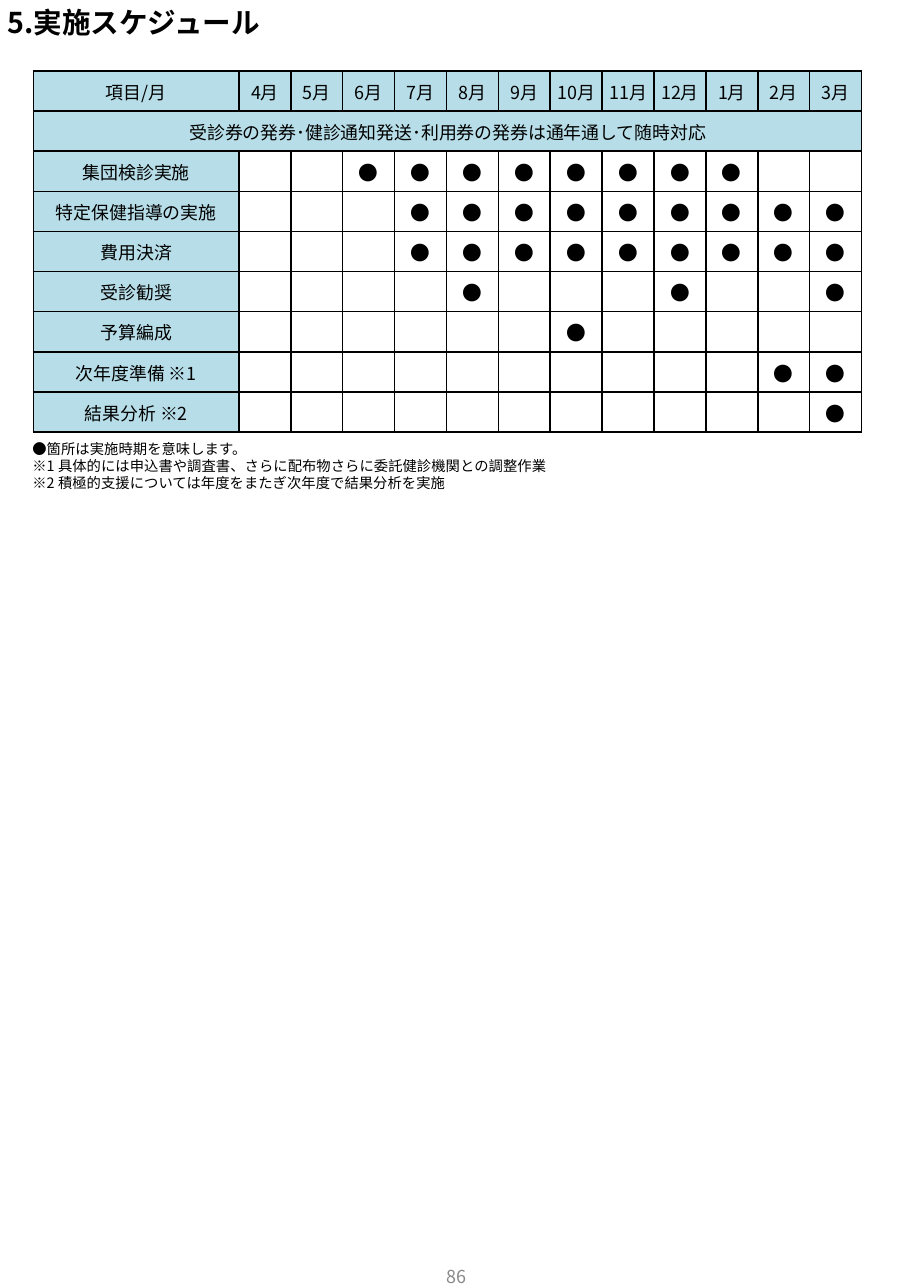
from lxml.etree import SubElement
from pptx import Presentation
from pptx.dml.color import RGBColor
from pptx.enum.text import MSO_ANCHOR as Anchor, MSO_AUTO_SIZE as AutoSize, PP_ALIGN as Align
from pptx.oxml.ns import qn
from pptx.util import Cm, Pt

TITLE = "5.実施スケジュール"
PAGE_NUMBER = "86"
CORNER = "項目/月"
MONTHS = [4, 5, 6, 7, 8, 9, 10, 11, 12, 1, 2, 3]
YEAR_ROUND = "受診券の発券･健診通知発送･利用券の発券は通年通して随時対応"
SCHEDULE = [
    ("集団検診実施", [6, 7, 8, 9, 10, 11, 12, 1]),
    ("特定保健指導の実施", [7, 8, 9, 10, 11, 12, 1, 2, 3]),
    ("費用決済", [7, 8, 9, 10, 11, 12, 1, 2, 3]),
    ("受診勧奨", [8, 12, 3]),
    ("予算編成", [10]),
    ("次年度準備 ※1", [2, 3]),
    ("結果分析 ※2", [3]),
]
NOTES = [
    "●箇所は実施時期を意味します。",
    "※1 具体的には申込書や調査書、さらに配布物さらに委託健診機関との調整作業",
    "※2 積極的支援については年度をまたぎ次年度で結果分析を実施",
]

FONT = "Noto Sans CJK JP"
COLORS = {"text": "000000", "line": "000000", "header": "B7DEE8",
          "body": "FFFFFF", "page": "898989"}
TABLE_LEFT, TABLE_TOP, TABLE_WIDTH, TABLE_HEIGHT = 0.66, 1.4, 16.33, 7.12
LABEL_WIDTH = 4.05


def add_run(paragraph, text, size, color="text", bold=False):
    run = paragraph.add_run()
    run.text = text
    font = run.font
    font.size, font.bold, font.name = Pt(size), bold, FONT
    font.color.rgb = RGBColor.from_string(COLORS[color])
    SubElement(run._r.get_or_add_rPr(), qn("a:ea"), typeface=FONT)


def add_text(slide, box, lines, size, align, anchor, margins, auto_size=AutoSize.NONE, **style):
    shape = slide.shapes.add_textbox(*map(Cm, box))
    frame = shape.text_frame
    frame.word_wrap = True
    frame.auto_size = auto_size
    frame.vertical_anchor = anchor
    frame.margin_left, frame.margin_right = map(Cm, margins)
    for index, line in enumerate(lines):
        paragraph = frame.add_paragraph() if index else frame.paragraphs[0]
        paragraph.alignment = align
        add_run(paragraph, line, size, **style)


def set_borders(cell):
    properties = cell._tc.get_or_add_tcPr()
    for side in ("lnL", "lnR", "lnT", "lnB"):
        line = SubElement(properties, qn(f"a:{side}"), w=str(Pt(1)))
        fill = SubElement(line, qn("a:solidFill"))
        SubElement(fill, qn("a:srgbClr"), val=COLORS["line"])


def fill_cell(cell, text, size, color):
    cell.margin_left = cell.margin_right = cell.margin_top = Cm(0.02)
    cell.margin_bottom = 0
    cell.vertical_anchor = Anchor.MIDDLE
    set_borders(cell)
    cell.fill.solid()
    cell.fill.fore_color.rgb = RGBColor.from_string(COLORS[color])
    paragraph = cell.text_frame.paragraphs[0]
    paragraph.alignment = Align.CENTER
    if text:
        add_run(paragraph, text, size)
    else:  # keeps the empty line from stretching the row
        SubElement(paragraph._p, qn("a:endParaRPr"), sz=str(size * 100))


def add_schedule(slide):
    rows = [[CORNER] + [f"{month}月" for month in MONTHS],
            [YEAR_ROUND] + [""] * len(MONTHS)]
    rows += [[label] + ["●" if month in active else "" for month in MONTHS]
             for label, active in SCHEDULE]
    table = slide.shapes.add_table(
        len(rows), len(rows[0]), Cm(TABLE_LEFT), Cm(TABLE_TOP),
        Cm(TABLE_WIDTH), Cm(TABLE_HEIGHT)).table
    table.first_row = table.horz_banding = False
    for index, column in enumerate(table.columns):
        column.width = Cm((TABLE_WIDTH - LABEL_WIDTH) / len(MONTHS) if index else LABEL_WIDTH)
    for row in table.rows:
        row.height = Cm(TABLE_HEIGHT / len(rows))
    table.cell(1, 0).merge(table.cell(1, len(MONTHS)))

    for row_index, row in enumerate(rows):
        for column_index, text in enumerate(row):
            cell = table.cell(row_index, column_index)
            if cell.is_spanned:
                continue
            header = row_index < 2 or column_index == 0
            fill_cell(cell, text, 10 if header else 11, "header" if header else "body")


def main():
    presentation = Presentation()
    presentation.slide_width, presentation.slide_height = Cm(18), Cm(25.4)
    slide = presentation.slides.add_slide(presentation.slide_layouts[6])
    add_text(slide, (0.15, -0.03, 16.05, 0.94), [TITLE], 16, Align.JUSTIFY,
             Anchor.MIDDLE, (0, 0), AutoSize.SHAPE_TO_FIT_TEXT, bold=True)
    add_text(slide, (6.9, 24.5, 4.2, 1.35), [PAGE_NUMBER], 10, Align.CENTER,
             Anchor.MIDDLE, (0.25, 0.25), color="page")
    add_text(slide, (0.64, 8.56, 14.27, 1.27), NOTES, 8, Align.LEFT,
             Anchor.TOP, (0, 0.25), AutoSize.SHAPE_TO_FIT_TEXT)
    add_schedule(slide)
    presentation.save("out.pptx")


if __name__ == "__main__":
    main()
